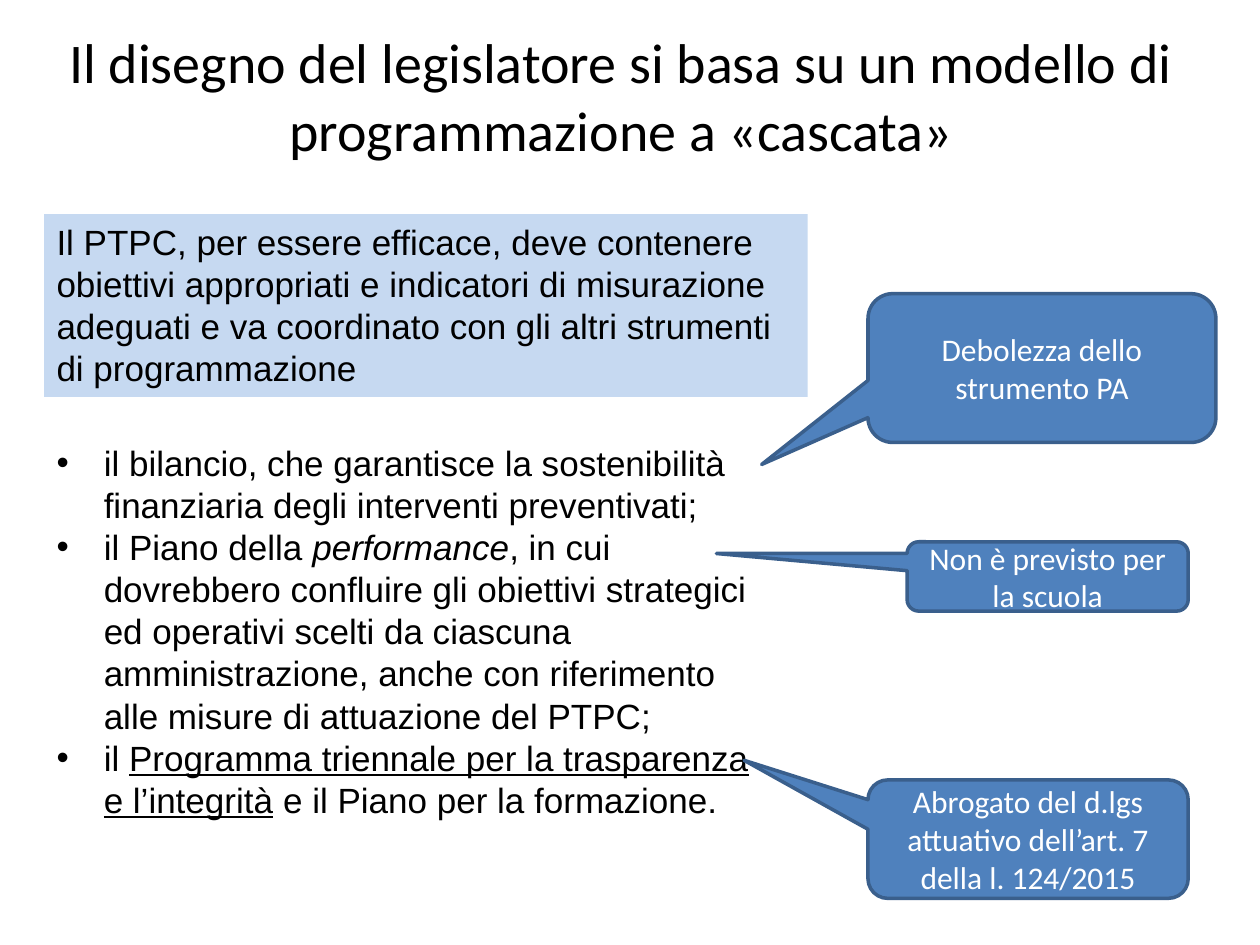
from lxml.etree import SubElement
from pptx import Presentation
from pptx.dml.color import RGBColor
from pptx.enum.shapes import MSO_SHAPE
from pptx.enum.text import MSO_ANCHOR, MSO_AUTO_SIZE, PP_ALIGN
from pptx.oxml.ns import qn
from pptx.util import Pt

COLORS = {
    "text": "000000",
    "premise": "C6D9F1",
    "callout": "4F81BD",
    "outline": "3A5F8C",
    "callout_text": "FFFFFF",
}
TITLE = "Il disegno del legislatore si basa su un modello di programmazione a «cascata»"
PREMISE = (
    "Il PTPC, per essere efficace, deve contenere obiettivi appropriati e indicatori "
    "di misurazione adeguati e va coordinato con gli altri strumenti di programmazione"
)
TOOLS = [
    [("il bilancio, che garantisce la sostenibilità finanziaria degli interventi preventivi;"
      .replace("preventivi;", "preventivati;"), None)],
    [("il Piano della ", None),
     ("performance", "italic"),
     (", in cui dovrebbero confluire gli obiettivi strategici ed operativi scelti da "
      "ciascuna amministrazione, anche con riferimento alle misure di attuazione del PTPC;", None)],
    [("il ", None),
     ("Programma triennale per la trasparenza e l’integrità", "underline"),
     (" e il Piano per la formazione.", None)],
]
CALLOUTS = [
    ("Debolezza dello strumento PA", (496, 167.8, 198.8, 85), (435.2, 265.4)),
    ("Non è previsto per la scuola", (518.4, 309.6, 160.6, 39.6), (409.4, 316.3)),
    ("Abrogato del d.lgs attuativo dell’art. 7 della l. 124/2015",
     (496, 445.7, 183, 67.7), (425.2, 434.5)),
]


def rgb(role):
    """Return the colour of a role."""
    return RGBColor.from_string(COLORS[role])


def set_font(paragraph, name, size, role="text"):
    """Set the font of a whole paragraph."""
    paragraph.font.name = name
    paragraph.font.size = Pt(size)
    paragraph.font.color.rgb = rgb(role)


def place_title(slide, box):
    """Move, fill and format the title placeholder."""
    title = slide.shapes.title
    title.left, title.top, title.width, title.height = map(Pt, box)
    frame = title.text_frame
    frame.text = TITLE
    frame.vertical_anchor = MSO_ANCHOR.MIDDLE
    heading = frame.paragraphs[0]
    heading.alignment = PP_ALIGN.CENTER
    set_font(heading, "Calibri", 32)


def add_text_area(slide, box):
    """Add a wrapping text box that grows with its text."""
    area = slide.shapes.add_textbox(*map(Pt, box))
    area.text_frame.word_wrap = True
    area.text_frame.auto_size = MSO_AUTO_SIZE.SHAPE_TO_FIT_TEXT
    return area


def add_premise(slide, box):
    """Add the shaded statement about the PTPC."""
    premise = add_text_area(slide, box)
    premise.fill.solid()
    premise.fill.fore_color.rgb = rgb("premise")
    premise.text_frame.text = PREMISE
    set_font(premise.text_frame.paragraphs[0], "Arial", 20)


def set_bullet(paragraph, indent):
    """Give a paragraph a round bullet with a hanging indent."""
    properties = paragraph._p.get_or_add_pPr()
    properties.set("marL", str(Pt(indent)))
    properties.set("indent", str(-Pt(indent)))
    SubElement(properties, qn("a:buFont"), typeface="Arial")
    SubElement(properties, qn("a:buChar"), char="•")


def add_tools(slide, box):
    """Add the bulleted list of planning tools."""
    frame = add_text_area(slide, box).text_frame
    for index, tool in enumerate(TOOLS):
        paragraph = frame.add_paragraph() if index else frame.paragraphs[0]
        set_bullet(paragraph, 27)
        set_font(paragraph, "Arial", 20)
        for text, emphasis in tool:
            run = paragraph.add_run()
            run.text = text
            if emphasis:
                setattr(run.font, emphasis, True)


def add_callout(slide, text, box, tip):
    """Add a rounded callout whose tail ends at the tip."""
    left, top, width, height = box
    callout = slide.shapes.add_shape(MSO_SHAPE.ROUNDED_RECTANGULAR_CALLOUT, *map(Pt, box))
    callout.adjustments[0] = (tip[0] - left) / width - 0.5
    callout.adjustments[1] = (tip[1] - top) / height - 0.5
    callout.shadow.inherit = False
    callout.fill.solid()
    callout.fill.fore_color.rgb = rgb("callout")
    callout.line.color.rgb = rgb("outline")
    callout.line.width = Pt(2)
    frame = callout.text_frame
    frame.word_wrap = True
    frame.vertical_anchor = MSO_ANCHOR.MIDDLE
    frame.text = text
    remark = frame.paragraphs[0]
    remark.alignment = PP_ALIGN.CENTER
    set_font(remark, "Calibri", 18, "callout_text")


def main():
    """Build and save the slide."""
    deck = Presentation()
    deck.slide_width, deck.slide_height = Pt(720), Pt(540)
    slide = deck.slides.add_slide(deck.slide_layouts[5])
    place_title(slide, (31, 9.4, 648, 90))
    add_tools(slide, (25.2, 249, 414, 225.4))
    add_premise(slide, (25.2, 122.4, 436.4, 104.4))
    for text, box, tip in CALLOUTS:
        add_callout(slide, text, box, tip)
    deck.save("out.pptx")


if __name__ == "__main__":
    main()
